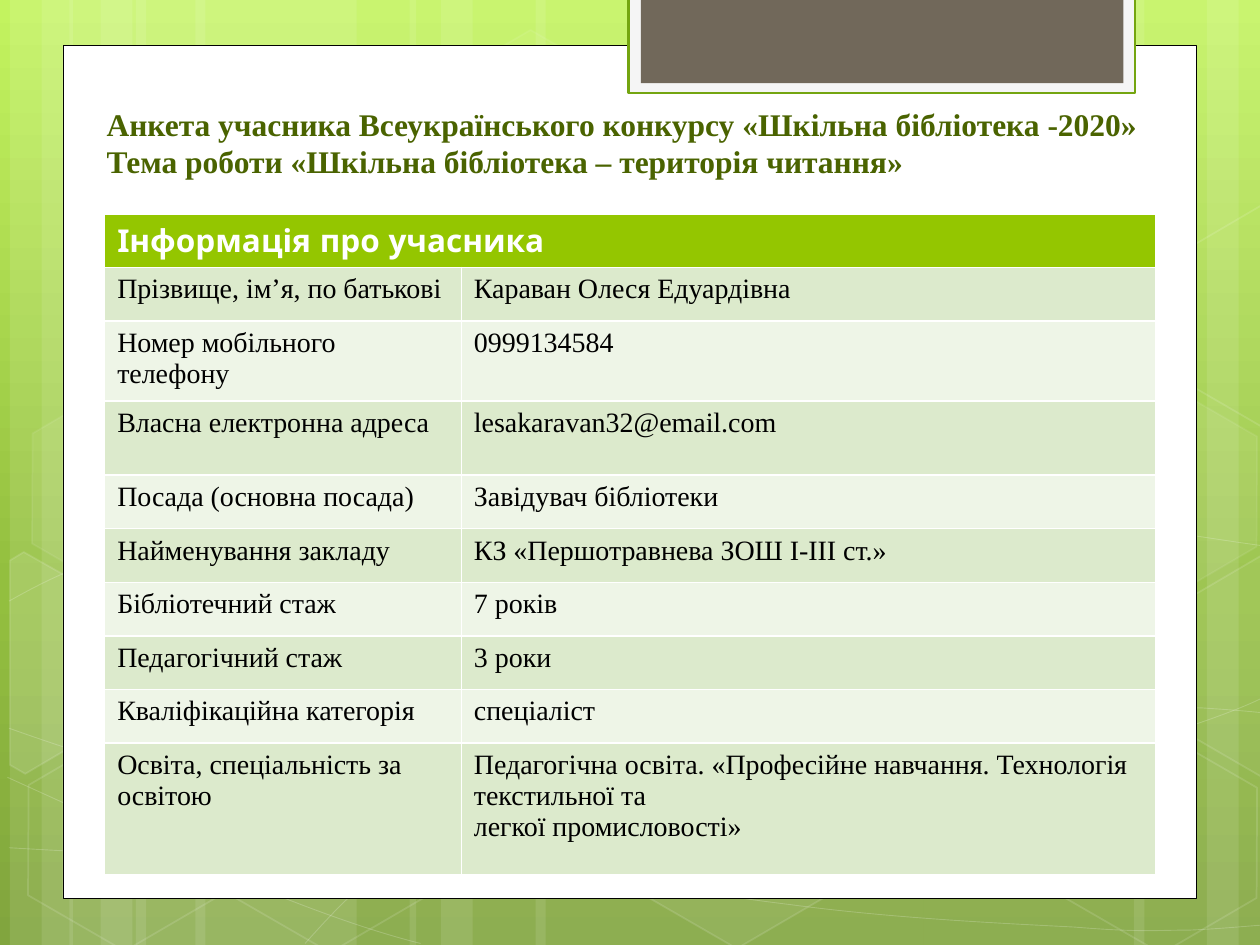
"""Build the library contest entry form slide."""
from copy import deepcopy
from dataclasses import dataclass
from typing import Optional

from lxml import etree
from pptx import Presentation
from pptx.dml import color
from pptx.enum import shapes, text
from pptx.oxml import ns
from pptx import util as u

Point = tuple[float, float]


@dataclass(frozen=True)
class Theme:
    white: str = "FFFFFF"
    black: str = "000000"
    frame: str = "F5F5F5"
    edge: str = "74A510"
    tab: str = "71685A"
    title: str = "4A6300"
    head: str = "94C600"
    bands: tuple = ("DCEACC", "EEF5E7")
    sky: tuple = ((0, "C3F35F"), (0.62, "93BF3F"), (1, "81A53E"))
    serif: str = "Times New Roman"
    sans: str = "Quicksand"
    large: int = 18
    small: int = 16


@dataclass(frozen=True)
class Look:
    fill: Optional[str] = None
    clear: Optional[int] = None
    line: Optional[str] = None
    width: float = 1
    faint: Optional[int] = None


@dataclass(frozen=True)
class Hex:
    left: float
    top: float
    fill: int
    line: int


@dataclass(frozen=True)
class Row:
    label: str
    value: str
    height: float = 1.08


T = Theme()
STRIPES = [(2.74, 4.45), (0.2, 1.27), (0.84, 2.11), (3.94, 4.45), (1.4, 1.27), (2.03, 2.11),
           (18.62, 4.45), (24.33, 1.27), (22.86, 2.11), (10.8, 7.82), (8.26, 1.27), (8.89, 2.11)]
CURVES = [
    [(0.18, 17.09), (1.55, 17.17), (2.92, 17.25), (4.83, 17.22), (6.73, 17.2), (9.09, 17.15),
     (11.63, 16.89), (14.17, 16.64), (17.78, 16.15), (20.12, 15.67), (22.43, 15.19),
     (24.82, 14.43), (25.58, 14)],
    [(0.18, 12.12), (0.91, 11.71), (1.65, 11.33), (3.07, 10.95), (4.52, 10.57), (6.58, 10.01),
     (8.81, 9.83), (11.07, 9.65), (13.82, 9.63), (16.61, 9.83), (19.41, 10.03),
     (24.05, 10.82), (25.58, 11.02)],
    [(0.15, 15.67), (3.23, 17.07), (6.27, 18.47), (8.48, 19.02)],
    [(0.18, 14.68), (0.97, 14.96), (1.78, 15.24), (3.25, 15.65), (4.72, 16.03), (6.93, 16.66),
     (9.07, 17.09), (11.18, 17.53), (13.84, 17.98), (15.95, 18.24), (18.06, 18.52),
     (20.32, 18.62), (21.67, 18.69), (22.99, 18.8), (23.34, 18.75), (24, 18.75),
     (24.66, 18.72), (25.12, 18.67), (25.58, 18.64)],
    [(6.15, 19.02), (6.6, 18.52), (7.06, 18.01), (7.67, 17.55), (8.28, 17.09), (9.14, 16.59),
     (9.86, 16.23), (10.57, 15.88), (11, 15.72), (11.94, 15.47), (12.85, 15.21),
     (14.55, 14.86), (15.44, 14.68), (16.36, 14.5), (16.48, 14.5), (17.27, 14.45),
     (18.06, 14.38), (19.3, 14.3), (20.17, 14.27), (21.06, 14.25), (22.5, 14.27),
     (22.5, 14.27), (23.07, 14.27), (23.64, 14.27), (24.21, 14.27), (24.66, 14.3),
     (25.1, 14.33), (25.55, 14.38)],
]
HEXES = [Hex(8.48, 0.91, 4, 8), Hex(12.62, 14.96, 6, 12), Hex(0.28, 15.01, 0, 12),
         Hex(0.36, 7.92, 7, 8), Hex(4.42, 15.04, 0, 12), Hex(21.18, 15.06, 0, 12),
         Hex(21.18, 7.98, 7, 8)]
LEFT = [(0.2, 11.3), (0.48, 11.13), (2.44, 12.24), (2.41, 14.48), (0.51, 15.6), (0.2, 15.42)]
RIGHT = [(23.52, 12.32), (25.43, 11.2), (25.63, 11.33), (25.63, 15.67), (25.45, 15.67),
         (23.52, 14.55)]
ROWS = [
    Row("Прізвище, ім’я, по батькові", "Караван Олеся Едуардівна"),
    Row("Номер мобільного телефону", "0999134584", 1.08),
    Row("Власна електронна адреса", "lesakaravan32@email.com", 1.5),
    Row("Посада (основна посада)", "Завідувач бібліотеки"),
    Row("Найменування закладу", "КЗ «Першотравнева ЗОШ І-ІІІ ст.»"),
    Row("Бібліотечний стаж", "7 років"),
    Row("Педагогічний стаж", "3 роки"),
    Row("Кваліфікаційна категорія", "спеціаліст"),
    Row("Освіта, спеціальність за освітою",
        "Педагогічна освіта. «Професійне навчання. Технологія текстильної та\n"
        "легкої промисловості»", 2.65),
]


def rgb(code: str) -> color.RGBColor:
    return color.RGBColor.from_string(code)


def paint(fill, host, code: Optional[str], alpha: Optional[int]) -> None:
    if code is None or alpha == 0:
        fill.background()
        return
    fill.solid()
    fill.fore_color.rgb = rgb(code)
    if alpha is not None:
        tone = host.find(ns.qn("a:solidFill"))[0]
        etree.SubElement(tone, ns.qn("a:alpha"), val=str(alpha * 1000))


def dress(shape, look: Look) -> None:
    shape.shadow.inherit = False
    paint(shape.fill, shape.element.spPr, look.fill, look.clear)
    shape.line.width = u.Pt(look.width)
    paint(shape.line.fill, shape.element.spPr.find(ns.qn("a:ln")), look.line, look.faint)


def box(page, kind, place: tuple, look: Look):
    shape = page.shapes.add_shape(kind, *map(u.Cm, place))
    dress(shape, look)
    return shape


def trace(page, dots: list[Point], look: Look, close: bool):
    spots = [(u.Cm(x), u.Cm(y)) for x, y in dots]
    pen = page.shapes.build_freeform(*spots[0])
    pen.add_line_segments(spots[1:], close=close)
    shape = pen.convert_to_shape()
    dress(shape, look)
    return shape


def bend(shape) -> None:
    route = next(shape.element.iter(ns.qn("a:path")))
    legs = route.findall(ns.qn("a:lnTo"))
    for i in range(0, len(legs), 3):
        arc = etree.SubElement(route, ns.qn("a:cubicBezTo"))
        for leg in legs[i:i + 3]:
            arc.append(leg[0])
            route.remove(leg)


def style(frame, face: str, size: int, tone: str, bold: bool) -> None:
    for line in frame.paragraphs:
        for run in line.runs:
            font = run.font
            font.name, font.size, font.bold = face, u.Pt(size), bold
            font.color.rgb = rgb(tone)


def shade(cell, code: str) -> None:
    cell.fill.solid()
    cell.fill.fore_color.rgb = rgb(code)


def scene(page) -> None:
    fill = page.background.fill
    fill.gradient()
    fill.gradient_angle = 270
    stops = next(page.element.iter(ns.qn("a:gsLst")))
    stops.insert(1, deepcopy(stops[0]))
    for stop, (at, code) in zip(fill.gradient_stops, T.sky):
        stop.position, stop.color.rgb = at, rgb(code)

    rect = shapes.MSO_SHAPE.RECTANGLE
    for left, width in STRIPES:
        box(page, rect, (left, 0, width, 19.05), Look(T.white, 10))
    for knots in CURVES:
        bend(trace(page, knots, Look(line=T.white, width=0.5, faint=20), False))
    for h in HEXES:
        shape = box(page, shapes.MSO_SHAPE.HEXAGON, (h.left, h.top, 4.45, 3.86),
                    Look(T.white, h.fill, T.white, 1, h.line))
        shape.rotation = 30
        shape.adjustments[0] = 0.285
    upper = [(x, y - 7.06) for x, y in RIGHT]
    for dots, alpha in ((LEFT, 10), (RIGHT, 4), (upper, 0)):
        trace(page, dots, Look(T.white, alpha, T.white, 1, 12), True)
    box(page, rect, (1.27, 0.91, 22.86, 17.2), Look(T.white, line=T.black, width=0.5))
    box(page, rect, (12.67, -0.05, 10.21, 1.93), Look(T.frame, line=T.edge, width=1.25))
    box(page, rect, (12.92, -0.05, 9.73, 1.73), Look(T.tab))


def title(page) -> None:
    frame = page.shapes.add_textbox(*map(u.Cm, (1.9, 1.92, 22, 1.84))).text_frame
    frame.word_wrap = True
    frame.vertical_anchor = text.MSO_ANCHOR.BOTTOM
    frame.text = ("Анкета учасника Всеукраїнського конкурсу «Шкільна бібліотека -2020»\v"
                  "Тема роботи «Шкільна бібліотека – територія читання»")
    style(frame, T.serif, T.large, T.title, True)


def form(page) -> None:
    size = map(u.Cm, (2.11, 4.32, 21.19, 13.2))
    grid = page.shapes.add_table(len(ROWS) + 1, 2, *size).table
    grid.columns[0].width, grid.columns[1].width = u.Cm(7.19), u.Cm(14)
    grid.rows[0].height = u.Cm(1.07)
    head = grid.cell(0, 0)
    head.merge(grid.cell(0, 1))
    head.text_frame.text = "Інформація про учасника"
    style(head.text_frame, T.sans, T.large, T.white, True)
    shade(head, T.head)
    for i, row in enumerate(ROWS):
        grid.rows[i + 1].height = u.Cm(row.height)
        for cell, words in zip(grid.rows[i + 1].cells, (row.label, row.value)):
            cell.text_frame.text = words
            style(cell.text_frame, T.serif, T.small, T.black, False)
            shade(cell, T.bands[i % 2])


def main() -> None:
    deck = Presentation()
    deck.slide_width, deck.slide_height = u.Cm(25.4), u.Cm(19.05)
    page = deck.slides.add_slide(deck.slide_layouts[6])
    scene(page)
    title(page)
    form(page)
    deck.save("out.pptx")


if __name__ == "__main__":
    main()
